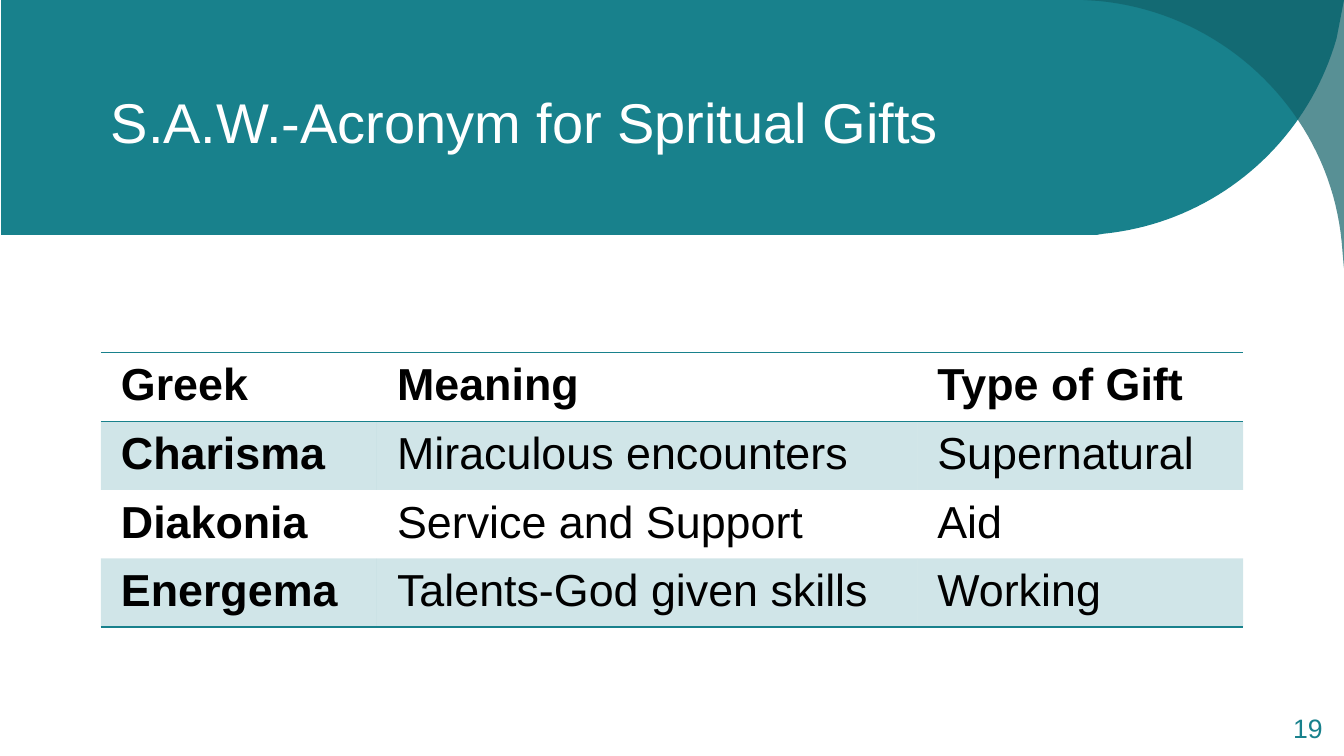
"""Build the slide on the acronym for spiritual gifts."""
from dataclasses import dataclass

from lxml import etree
from pptx import Presentation
from pptx.dml.color import RGBColor
from pptx.enum.text import MSO_ANCHOR, PP_ALIGN
from pptx.oxml.ns import qn
from pptx.util import Inches, Pt

LEFT, RIGHT = PP_ALIGN.LEFT, PP_ALIGN.RIGHT
TOP, MIDDLE = MSO_ANCHOR.TOP, MSO_ANCHOR.MIDDLE
WIDTH, HEIGHT = Inches(13.333), Inches(7.5)
FONT = "Arial"
TEAL, DARK_TEAL, WHITE, BLACK = "18818C", "126169", "FFFFFF", "000000"
PLAIN_TABLE_STYLE = "{2D5ABB26-0587-4C30-8999-92F81FD0307C}"
CURVE_STEPS = 40
COLUMN_WIDTHS = (20.55, 40.2, 24.25)
ROW_HEIGHT = 9.07
GIFTS = (
    ("Greek", "Meaning", "Type of Gift"),
    ("Charisma", "Miraculous encounters", "Supernatural"),
    ("Diakonia", "Service and Support", "Aid"),
    ("Energema", "Talents-God given skills", "Working"),
)
Point = tuple[float, float]


@dataclass(frozen=True)
class Box:
    """A frame in percent of the slide's width and height."""

    left: float
    top: float
    width: float
    height: float

    def lengths(self) -> tuple[int, int, int, int]:
        """Return left, top, width and height as slide lengths."""
        return across(self.left), down(self.top), across(self.width), down(self.height)


@dataclass(frozen=True)
class Swoosh:
    """A banner outline: straight corners, then a curve back to the start."""

    corners: tuple[Point, ...]
    curve: tuple[Point, Point, Point, Point]
    color: str
    opacity: int


@dataclass(frozen=True)
class TextStyle:
    """The look of one run and its paragraph."""

    size: float
    color: str
    bold: bool = False
    align: PP_ALIGN = LEFT
    line_spacing: float = 1.0
    space_after: float = 0


SWOOSHES = (
    Swoosh(((100, 0), (0.08, 0), (0.08, 31.07), (81.6, 31.07)),
           ((82.05, 30.93), (90.38, 29.47), (97.2, 19.07), (99.45, 5.07)), TEAL, 100),
    Swoosh(((80.63, 0), (100, 0), (100, 35.47)),
           ((99.83, 32), (98.93, 15.2), (91.28, 1.73), (81.75, 0.13)), DARK_TEAL, 70),
)


def across(percent: float) -> int:
    """Return a share of the slide's width."""
    return round(WIDTH * percent / 100)


def down(percent: float) -> int:
    """Return a share of the slide's height."""
    return round(HEIGHT * percent / 100)


def rgb(color: str) -> RGBColor:
    """Turn a hex string into a colour."""
    return RGBColor.from_string(color)


def paint(fill, properties, color: str, opacity: int) -> None:
    """Fill with a colour at an opacity in percent."""
    fill.solid()
    fill.fore_color.rgb = rgb(color)
    if opacity < 100:
        color_element = properties.find(f"{qn('a:solidFill')}/{qn('a:srgbClr')}")
        etree.SubElement(color_element, qn("a:alpha"), val=str(opacity * 1000))


def write(text_frame, text: str, style: TextStyle, anchor: MSO_ANCHOR | None = None) -> None:
    """Write one styled paragraph into a text frame."""
    if anchor is not None:
        text_frame.word_wrap = True
        text_frame.vertical_anchor = anchor
    paragraph = text_frame.paragraphs[0]
    paragraph.alignment = style.align
    paragraph.line_spacing = style.line_spacing
    paragraph.space_after = Pt(style.space_after)
    run = paragraph.add_run()
    run.text = text
    run.font.name = FONT
    run.font.size = Pt(style.size)
    run.font.bold = style.bold
    run.font.color.rgb = rgb(style.color)


def bezier(points: tuple[Point, Point, Point, Point], share: float) -> Point:
    """Return the point at a share of the way along a cubic curve."""
    rest = 1 - share
    weights = (rest**3, 3 * rest**2 * share, 3 * rest * share**2, share**3)
    x, y = (sum(w * value for w, value in zip(weights, axis)) for axis in zip(*points))
    return x, y


def add_swoosh(slide, swoosh: Swoosh) -> None:
    """Draw one part of the banner."""
    curve = [bezier(swoosh.curve, step / CURVE_STEPS) for step in range(CURVE_STEPS + 1)]
    start, *others = [(across(x), down(y)) for x, y in (*swoosh.corners, *curve)]
    builder = slide.shapes.build_freeform(*start)
    builder.add_line_segments(others, close=True)
    shape = builder.convert_to_shape()
    shape.shadow.inherit = False
    shape.line.fill.background()
    paint(shape.fill, shape.element.spPr, swoosh.color, swoosh.opacity)


def add_border(properties, side: str) -> None:
    """Add a thin teal border on one side of a cell."""
    line = etree.SubElement(properties, qn(f"a:{side}"), w=str(Pt(1)))
    fill = etree.SubElement(line, qn("a:solidFill"))
    etree.SubElement(fill, qn("a:srgbClr"), val=TEAL)


def add_gift_table(slide, box: Box) -> None:
    """Add the table of gifts with shaded alternate rows."""
    frame = slide.shapes.add_table(len(GIFTS), len(COLUMN_WIDTHS), *box.lengths())
    table = frame.table
    table.horz_banding = False
    next(frame.element.iter(qn("a:tableStyleId"))).text = PLAIN_TABLE_STYLE
    for column, width in zip(table.columns, COLUMN_WIDTHS):
        column.width = across(width)
    for row in table.rows:
        row.height = down(ROW_HEIGHT)
    cell_elements = frame.element.iter(qn("a:tc"))
    for index, (cell, element) in enumerate(zip(table.iter_cells(), cell_elements)):
        row, column = divmod(index, len(COLUMN_WIDTHS))
        cell.margin_left = cell.margin_right = across(1.5)
        cell.margin_top = cell.margin_bottom = 0
        cell.vertical_anchor = TOP
        properties = element.find(qn("a:tcPr"))
        if row == 0:
            add_border(properties, "lnT")
        if row in (0, len(GIFTS) - 1):
            add_border(properties, "lnB")
        if row % 2:
            paint(cell.fill, properties, TEAL, 20)
        else:
            cell.fill.background()
        style = TextStyle(32, BLACK, row == 0 or column == 0, LEFT, 1.15, 8)
        write(cell.text_frame, GIFTS[row][column], style)


def add_title(slide, text: str, box: Box) -> None:
    """Place the title in front of the banner."""
    title = slide.shapes.title
    title.left, title.top, title.width, title.height = box.lengths()
    title.element.getparent().append(title.element)
    write(title.text_frame, text, TextStyle(40, WHITE), MIDDLE)


def main() -> None:
    """Build and save the presentation."""
    presentation = Presentation()
    presentation.slide_width, presentation.slide_height = WIDTH, HEIGHT
    slide = presentation.slides.add_slide(presentation.slide_layouts[5])
    for swoosh in SWOOSHES:
        add_swoosh(slide, swoosh)
    add_title(slide, "S.A.W.-Acronym for Spritual Gifts", Box(7.5, 6.53, 81.3, 18.93))
    number = slide.shapes.add_textbox(*Box(93.45, 93.87, 5.7, 5.33).lengths())
    write(number.text_frame, "19", TextStyle(19, TEAL, False, RIGHT, 0.9, 6), MIDDLE)
    add_gift_table(slide, Box(7.5, 46.67, sum(COLUMN_WIDTHS), ROW_HEIGHT * len(GIFTS)))
    presentation.save("out.pptx")


if __name__ == "__main__":
    main()
